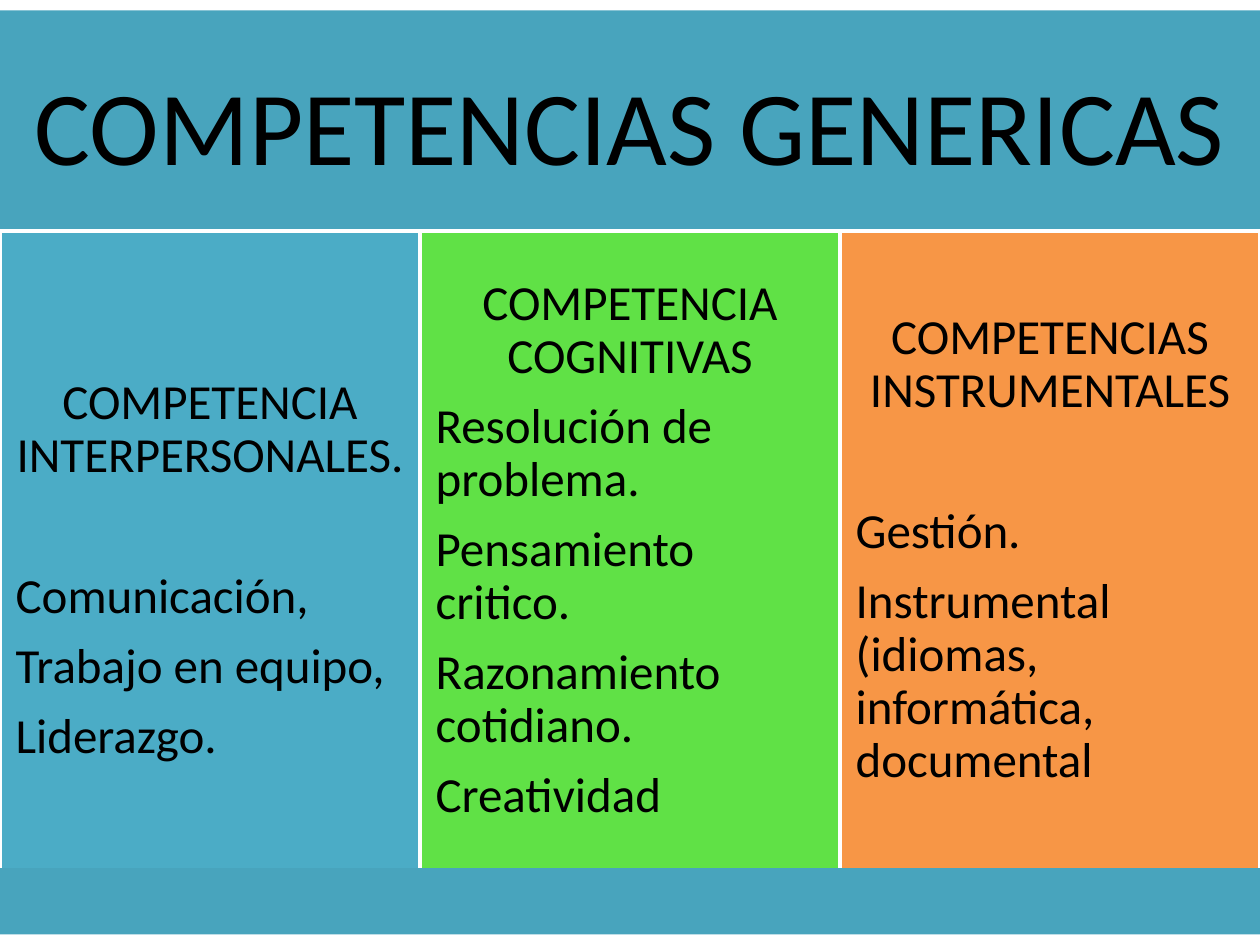
from pptx import Presentation
from pptx.dml.color import RGBColor
from pptx.enum.shapes import MSO_SHAPE as Shape
from pptx.enum.text import MSO_ANCHOR as Anchor, PP_ALIGN as Align
from pptx.util import Pt

BLACK = RGBColor(0x00, 0x00, 0x00)
WHITE = RGBColor(0xFF, 0xFF, 0xFF)
TEAL = RGBColor(0x48, 0xA4, 0xBD)
AQUA = RGBColor(0x4B, 0xAC, 0xC6)
GREEN = RGBColor(0x60, 0xE1, 0x46)
ORANGE = RGBColor(0xF7, 0x96, 0x46)

WIDTH, HEIGHT = 720, 540
BAND_TOP, BAND_HEIGHT = 6, 138
COLUMN_TOP, COLUMN_HEIGHT = 132, 388
FOOTER_TOP, FOOTER_HEIGHT = 496, 38
TITLE_SIZE, BODY_SIZE = 60, 28
COLUMN_INSET = 8.96

# Fill, heading, items, space below the heading, extra room at the bottom
COLUMNS = [
    (AQUA, "COMPETENCIA INTERPERSONALES.",
     ["Comunicación,", "Trabajo en equipo,", "Liderazgo."], 50.3, 0),
    (GREEN, "COMPETENCIA COGNITIVAS",
     ["Resolución de problema.", "Pensamiento critico.",
      "Razonamiento cotidiano.", "Creatividad"], 9.8, 23),
    (ORANGE, "COMPETENCIAS INSTRUMENTALES",
     ["Gestión.", "Instrumental (idiomas, informática, documental"], 50.3, 23),
]


class SlideBuilder:
    """Holds the text style and the current slide."""

    font = "Calibri"
    line_spacing = 0.9

    def __init__(self, page):
        self.page = page

    def block(self, left, top, width, height, fill, outline=None):
        box = self.page.shapes.add_shape(
            Shape.RECTANGLE, Pt(left), Pt(top), Pt(width), Pt(height))
        box.shadow.inherit = False
        box.fill.solid()
        box.fill.fore_color.rgb = fill
        if outline is None:
            box.line.fill.background()
        else:
            box.line.color.rgb = outline
            box.line.width = Pt(2)
        return box

    def label(self, box, lines, size, inset, extra_bottom=0):
        """Put (text, alignment, space after) lines into a block."""
        frame = box.text_frame
        frame.word_wrap = True
        frame.vertical_anchor = Anchor.MIDDLE
        frame.margin_left = frame.margin_right = frame.margin_top = Pt(inset)
        frame.margin_bottom = Pt(inset + extra_bottom)
        frame.text = "\n".join(text for text, _, _ in lines)
        for para, (_, alignment, space_after) in zip(frame.paragraphs, lines):
            para.alignment = alignment
            para.line_spacing = self.line_spacing
            para.space_after = Pt(space_after)
            for span in para.runs:
                span.font.name = self.font
                span.font.size = Pt(size)
                span.font.color.rgb = BLACK


def main():
    deck = Presentation()
    deck.slide_width, deck.slide_height = Pt(WIDTH), Pt(HEIGHT)
    builder = SlideBuilder(deck.slides.add_slide(deck.slide_layouts[6]))

    # Title band
    band = builder.block(0, BAND_TOP, WIDTH, BAND_HEIGHT, TEAL)
    builder.label(band, [("COMPETENCIAS GENERICAS", Align.CENTER, 0)],
                  TITLE_SIZE, 18)

    # Three columns of competences
    column_width = WIDTH / len(COLUMNS)
    for index, (fill, heading, items, gap, extra) in enumerate(COLUMNS):
        column = builder.block(index * column_width, COLUMN_TOP,
                               column_width, COLUMN_HEIGHT, fill, WHITE)
        lines = [(heading, Align.CENTER, gap)]
        lines += [(item, Align.LEFT, 0.35 * BODY_SIZE) for item in items]
        builder.label(column, lines, BODY_SIZE, COLUMN_INSET, extra)

    # Footer band
    builder.block(0, FOOTER_TOP, WIDTH, FOOTER_HEIGHT, TEAL)

    deck.save("out.pptx")


if __name__ == "__main__":
    main()
